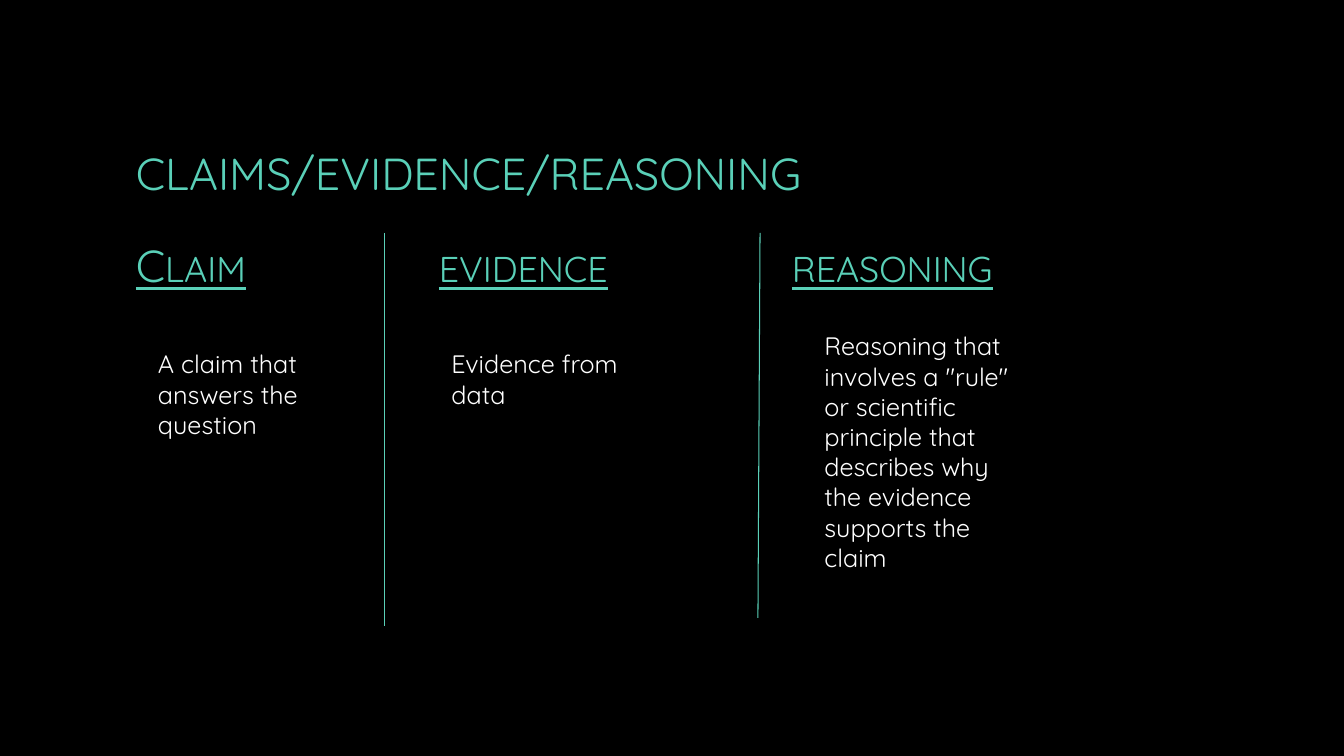
from lxml import etree
from pptx import Presentation
from pptx.dml.color import RGBColor
from pptx.enum.shapes import MSO_CONNECTOR
from pptx.enum.text import MSO_ANCHOR
from pptx.oxml.ns import qn
from pptx.util import Pt

COLORS = {"background": "000000", "accent": "5AD0B8", "body": "FFFFFF"}
FONT = "Quicksand"
COLUMNS = [
    ("Claim", 90, "A claim that answers the question", (105.8, 245.5, 153.4, 94.3)),
    ("evidence", 306.4, "Evidence from data", (315.4, 245.5, 153.4, 72.7)),
    (
        "reasoning",
        558.5,
        'Reasoning that involves a "rule" or scientific principle that '
        "describes why the evidence supports the claim",
        (581.8, 232.6, 153.4, 203.8),
    ),
]
DIVIDERS = [(275, 166.3, 275, 447.1), (542.9, 166.3, 541.4, 441.4)]


def add_text(slide, box, text, size, color, anchor=MSO_ANCHOR.TOP):
    """Add a wrapped text box with one run and return the run."""
    shape = slide.shapes.add_textbox(*map(Pt, box))
    frame = shape.text_frame
    frame.word_wrap = True
    frame.vertical_anchor = anchor
    run = frame.paragraphs[0].add_run()
    run.text = text
    run.font.name = FONT
    run.font.size = Pt(size)
    run.font.color.rgb = RGBColor.from_string(COLORS[color])
    return run


def add_title(slide, box):
    """Add the slide title, centred vertically in its box."""
    add_text(slide, box, "CLAIMS/EVIDENCE/REASONING", 32, "accent", MSO_ANCHOR.MIDDLE)


def add_column(slide, heading, heading_left, description, box):
    """Add an underlined small-caps heading and the description below it."""
    run = add_text(slide, (heading_left, 166.3, 216, 48), heading, 32, "accent")
    run.font.underline = True
    run._r.get_or_add_rPr().set("cap", "small")
    add_text(slide, box, description, 18, "body")


def add_divider(slide, ends):
    """Add a thin line between two columns."""
    connector = slide.shapes.add_connector(MSO_CONNECTOR.STRAIGHT, *map(Pt, ends))
    connector.line.color.rgb = RGBColor.from_string(COLORS["accent"])
    connector.line.width = Pt(0.75)
    etree.SubElement(connector._element.spPr, qn("a:effectLst"))


def main():
    """Build the slide and save it."""
    presentation = Presentation()
    presentation.slide_width = Pt(960)
    presentation.slide_height = Pt(540)
    slide = presentation.slides.add_slide(presentation.slide_layouts[6])
    fill = slide.background.fill
    fill.solid()
    fill.fore_color.rgb = RGBColor.from_string(COLORS["background"])
    add_title(slide, (90, 48.2, 780, 149.8))
    for ends in DIVIDERS:
        add_divider(slide, ends)
    for column in COLUMNS:
        add_column(slide, *column)
    presentation.save("out.pptx")


if __name__ == "__main__":
    main()
